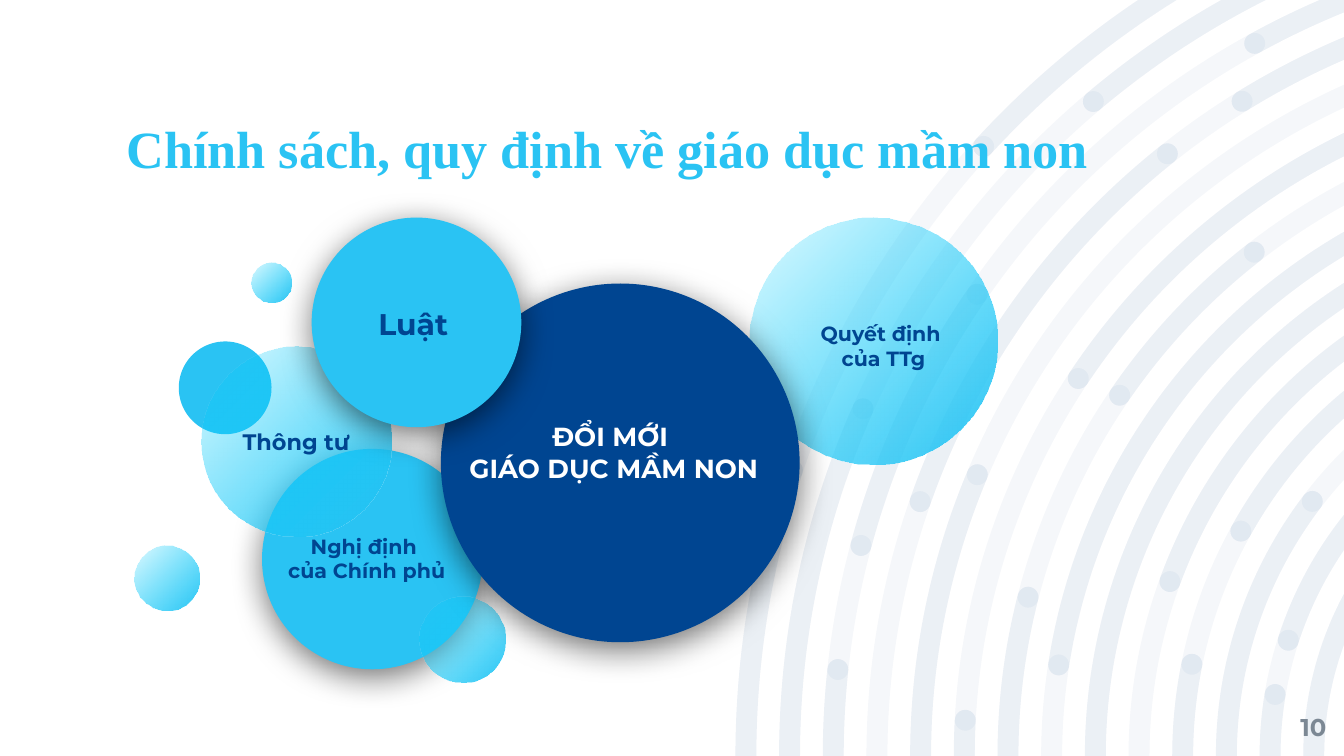
import math
from dataclasses import dataclass
from typing import Optional

from pptx import Presentation
from pptx import util as u
from pptx.dml.color import RGBColor
from pptx.enum import shapes, text
from pptx.oxml import ns, parse_xml

COLORS = {
    "navy": "004591",
    "sky": "2AC3F3",
    "aqua": "00D0FF",
    "white": "FFFFFF",
    "grey": "7C8894",
    "black": "000000",
}
WIDTH, HEIGHT = 720, 405
CENTER_X, CENTER_Y = 882, 405
OUTER_RADIUS, RING_PITCH, RING_WIDTH, RING_COUNT = 488, 23.4, 11.2, 14
HALF = RING_WIDTH / 2
RING_BOX = (CENTER_X - OUTER_RADIUS, 0, WIDTH, HEIGHT)
DOT_BOX = (419.8, 16.6, 708.5, 391)


@dataclass(frozen=True)
class Segment:
    ring: int
    start: Optional[float] = None
    end: Optional[float] = None


@dataclass(frozen=True)
class Arc:
    radius: float
    start: float
    sweep: float


@dataclass(frozen=True)
class Circle:
    left: float
    top: float
    size: float
    color: Optional[str] = None
    shadow: bool = False
    rotation: int = 0
    label: str = ""


@dataclass(frozen=True)
class Label:
    left: float
    top: float
    width: float
    height: float
    lines: tuple
    size: float
    color: str = "navy"


SEGMENTS = [
    Segment(0, None, 18.5), Segment(0, 42.6), Segment(1, None, 23.9), Segment(1, 49.8),
    Segment(2, None, 6.1), Segment(2, 15, 34.6), Segment(2, 61.2), Segment(3, 19.3, 51.5),
    Segment(3, 58.3), Segment(4, None, 22.8), Segment(5, None, 3), Segment(5, 33.6),
    Segment(6, None, 14.4), Segment(6, 34.4, 52.1), Segment(7, 8.8), Segment(8),
    Segment(9, 20.1), Segment(10, None, 11.4), Segment(10, 29), Segment(11, None, 37.3),
    Segment(12, None, 9.4), Segment(12, 17.9), Segment(13),
]

BACK_ITEMS = [
    Circle(140.4, 240.5, 118.1, "sky", shadow=True),
    Label(145.4, 262.1, 102.2, 74.2, ("Nghị định ", "của Chính phủ"), 11),
]

FRONT_ITEMS = [
    Circle(95.8, 182.9, 49.7, "sky", rotation=250),
    Circle(224.6, 319.7, 46.1, rotation=250),
    Circle(72, 292.3, 34.6, rotation=250),
    Circle(401.8, 116.6, 132.5, rotation=270),
    Circle(108, 185.8, 101.8, label="Thông tư"),
    Circle(134.6, 140.4, 21.6, rotation=250),
    Circle(236.2, 151.9, 192.2, "navy", shadow=True),
    Label(234, 196.6, 185.8, 91.4, ("ĐỔI MỚI", " GIÁO DỤC MẦM NON"), 14, "white"),
    Circle(167, 116.6, 112.3, "sky", shadow=True),
    Label(167, 136.1, 108.7, 74.2, ("Luật",), 16),
    Label(419, 148.3, 108.7, 74.2, ("Quyết định ", "của TTg"), 11),
]


def rgb(name: str) -> RGBColor:
    return RGBColor.from_string(COLORS[name])


def write(shape, lines, *, size, color, font="Montserrat", align=text.PP_ALIGN.CENTER,
          anchor=text.MSO_ANCHOR.MIDDLE, inset=7.2, spacing=1.0, wrap=True) -> None:
    frame = shape.text_frame
    frame.auto_size = text.MSO_AUTO_SIZE.NONE
    frame.word_wrap = wrap
    frame.vertical_anchor = anchor
    frame.margin_left = frame.margin_right = u.Pt(inset)
    frame.margin_top = frame.margin_bottom = u.Pt(inset)
    for index, line in enumerate(lines):
        paragraph = frame.add_paragraph() if index else frame.paragraphs[0]
        paragraph.alignment = align
        paragraph.line_spacing = spacing
        run = paragraph.add_run()
        run.text = line
        run.font.size = u.Pt(size)
        run.font.name = font
        run.font.bold = True
        run.font.color.rgb = rgb(color)


def polar(radius: float, angle: float) -> tuple:
    turn = math.radians(angle)
    return CENTER_X - radius * math.cos(turn), CENTER_Y - radius * math.sin(turn)


def edge_angle(radius: float) -> float:
    right = math.acos((CENTER_X - WIDTH) / radius)
    top = math.asin(CENTER_Y / radius) if radius > CENTER_Y else right
    return math.degrees(min(right, top))


def middle_radius(ring: int) -> float:
    return OUTER_RADIUS - HALF - ring * RING_PITCH


def band(segment: Segment) -> list:
    middle = middle_radius(segment.ring)
    outer, inner = middle + HALF, middle - HALF
    start = segment.start or 0
    if segment.end is None:
        outer_end, inner_end = edge_angle(outer), edge_angle(inner)
        inner_point = polar(inner, inner_end)
        turns_corner = polar(outer, outer_end)[0] < WIDTH - 1 and inner_point[1] > 1
        far_end = ([(WIDTH, 0)] if turns_corner else []) + [inner_point]
    else:
        outer_end = inner_end = segment.end
        far_end = [Arc(HALF, 180 + segment.end, 180)]
    near_end = [] if segment.start is None else [Arc(HALF, start, 180)]
    return [polar(outer, start), Arc(outer, 180 + start, outer_end - start), *far_end,
            Arc(inner, 180 + inner_end, start - inner_end), *near_end]


def dots(segment: Segment) -> list:
    centers = [polar(middle_radius(segment.ring), angle)
               for angle in (segment.start, segment.end) if angle is not None]
    return [[(x + HALF, y), Arc(HALF, 0, 180), Arc(HALF, 180, 180)] for x, y in centers]


def draw_pattern(slide, outlines: list, box: tuple) -> None:
    left, top, right, bottom = map(u.Pt, box)
    builder = slide.shapes.build_freeform(left, top, scale=1.0)
    builder.add_line_segments([(right, top), (right, bottom), (left, bottom)], close=True)
    shape = builder.convert_to_shape()
    shape.shadow.inherit = False
    shape.line.fill.background()
    shape.fill.solid()
    shape.fill.fore_color.rgb = rgb("navy")
    color = shape.element.spPr.find(ns.qn("a:solidFill"))[0]
    color.append(parse_xml(f'<a:alpha {ns.nsdecls("a")} val="4000"/>'))

    contour = next(shape.element.iter(ns.qn("a:path")))
    for command in list(contour):
        contour.remove(command)
    for outline in outlines:
        for index, step in enumerate(outline):
            if isinstance(step, Arc):
                radius = u.Pt(step.radius)
                markup = (f'<a:arcTo {ns.nsdecls("a")} wR="{radius}" hR="{radius}" '
                          f'stAng="{round(step.start % 360 * 60000)}" swAng="{round(step.sweep * 60000)}"/>')
            else:
                tag = "lnTo" if index else "moveTo"
                x, y = u.Pt(step[0]) - left, u.Pt(step[1]) - top
                markup = f'<a:{tag} {ns.nsdecls("a")}><a:pt x="{x}" y="{y}"/></a:{tag}>'
            contour.append(parse_xml(markup))
        contour.append(parse_xml(f'<a:close {ns.nsdecls("a")}/>'))


def draw_circle(slide, circle: Circle) -> None:
    box = [u.Pt(value) for value in (circle.left, circle.top, circle.size, circle.size)]
    shape = slide.shapes.add_shape(shapes.MSO_SHAPE.OVAL, *box)
    shape.rotation = circle.rotation
    shape.shadow.inherit = False
    shape.line.fill.background()
    properties = shape.element.spPr
    if circle.color:
        shape.fill.solid()
        shape.fill.fore_color.rgb = rgb(circle.color)
    else:
        shape.fill.background()
        properties.replace(properties.find(ns.qn("a:noFill")), parse_xml(
            f'<a:gradFill {ns.nsdecls("a")} rotWithShape="0"><a:gsLst>'
            f'<a:gs pos="0"><a:srgbClr val="{COLORS["sky"]}"/></a:gs>'
            f'<a:gs pos="100000"><a:srgbClr val="{COLORS["aqua"]}"><a:alpha val="12000"/></a:srgbClr></a:gs>'
            '</a:gsLst><a:path path="circle"><a:fillToRect l="100000" t="100000"/></a:path></a:gradFill>'))
    if circle.shadow:
        properties.find(ns.qn("a:effectLst")).append(parse_xml(
            f'<a:outerShdw {ns.nsdecls("a")} blurRad="{u.Pt(18)}" dist="{u.Pt(4)}" dir="5400000">'
            f'<a:srgbClr val="{COLORS["black"]}"><a:alpha val="55000"/></a:srgbClr></a:outerShdw>'))
    if circle.label:
        write(shape, [circle.label], size=12, color="navy", align=text.PP_ALIGN.LEFT, wrap=False)


def draw_label(slide, label: Label, **layout) -> None:
    box = [u.Pt(value) for value in (label.left, label.top, label.width, label.height)]
    write(slide.shapes.add_textbox(*box), label.lines, size=label.size, color=label.color, **layout)


def draw_items(slide, items: list) -> None:
    for item in items:
        draw = draw_circle if isinstance(item, Circle) else draw_label
        draw(slide, item)


def main() -> None:
    presentation = Presentation()
    presentation.slide_width, presentation.slide_height = u.Pt(WIDTH), u.Pt(HEIGHT)
    slide = presentation.slides.add_slide(presentation.slide_layouts[5])
    draw_pattern(slide, [band(Segment(ring)) for ring in range(RING_COUNT)], RING_BOX)
    draw_pattern(slide, [band(segment) for segment in SEGMENTS], RING_BOX)
    draw_pattern(slide, [dot for segment in SEGMENTS for dot in dots(segment)], DOT_BOX)
    draw_items(slide, BACK_ITEMS)

    title = slide.shapes.title
    title.element.getparent().append(title.element)
    title.left, title.top, title.width, title.height = map(u.Pt, (67.7, 65.5, 585.4, 31))
    write(title, ["Chính sách, quy định về giáo dục mầm non"], size=28, color="sky",
          font="Times New Roman", align=text.PP_ALIGN.LEFT, anchor=text.MSO_ANCHOR.BOTTOM,
          inset=0, spacing=0.9)
    draw_label(slide, Label(667.4, 373.7, 43.2, 31, ("10",), 13, "grey"),
               align=text.PP_ALIGN.RIGHT, inset=0)
    draw_items(slide, FRONT_ITEMS)
    presentation.save("out.pptx")


if __name__ == "__main__":
    main()
